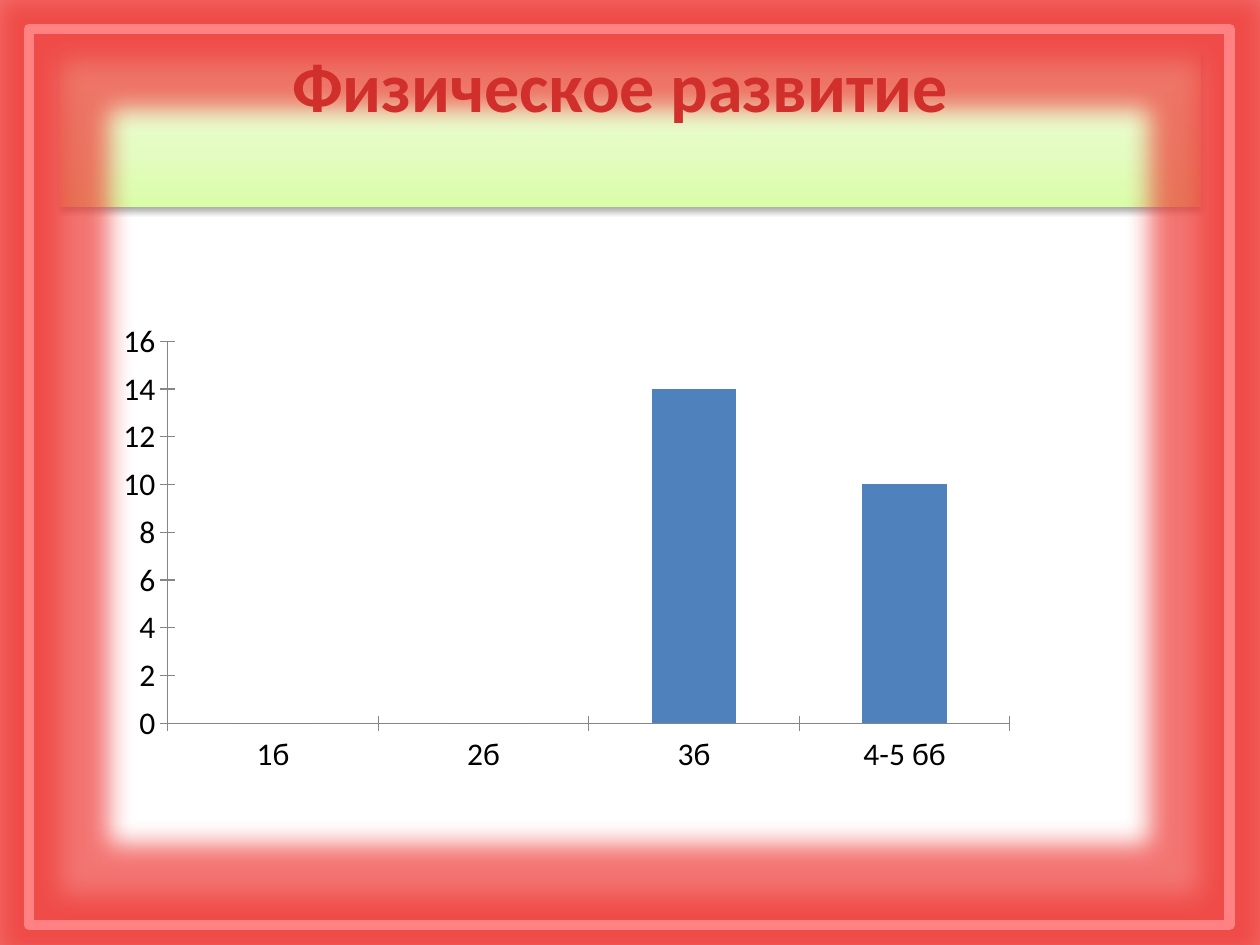
from pptx import Presentation
from pptx.chart.data import CategoryChartData
from pptx.dml.color import RGBColor
from pptx.enum.chart import XL_CHART_TYPE, XL_TICK_MARK
from pptx.enum.shapes import MSO_SHAPE
from pptx.enum.text import MSO_ANCHOR, PP_ALIGN
from pptx.oxml import parse_xml
from pptx.oxml.ns import nsdecls, qn
from pptx.util import Pt

COLUMN_STACKED = XL_CHART_TYPE.COLUMN_STACKED
TICK_CROSS = XL_TICK_MARK.CROSS
RECTANGLE = MSO_SHAPE.RECTANGLE
TOP = MSO_ANCHOR.TOP
CENTER = PP_ALIGN.CENTER

FRAME_PINK = RGBColor(0xFF, 0x81, 0x81)
GLOW_RED = RGBColor(0xEE, 0x3A, 0x36)
SHADOW_BLACK = RGBColor(0, 0, 0)
TITLE_RED = RGBColor(0xD0, 0x2F, 0x2C)
TEXT_BLACK = RGBColor(0, 0, 0)
COLUMN_BLUE = RGBColor(0x4F, 0x81, 0xBD)
AXIS_GRAY = RGBColor(0x86, 0x86, 0x86)
BANNER_STOPS = [
    (0, RGBColor(0xDA, 0xFD, 0xA7)),
    (35, RGBColor(0xE4, 0xFC, 0xC2)),
    (100, RGBColor(0xF5, 0xFF, 0xE7)),
]

TITLE_FORMAT = {"name": "Calibri", "size": Pt(40), "bold": True}
CHART_FORMAT = {"name": "Calibri", "size": Pt(18), "bold": False}
PLOT_LAYOUT = {"x": 0.09, "y": 0.18, "w": 0.91, "h": 0.71}
SCORES = {"1б": 0, "2б": 0, "3б": 14, "4-5 бб": 10}


def apply_format(target, values):
    for name, value in values.items():
        setattr(target, name, value)


def format_font(font, values, color):
    apply_format(font, values)
    font.color.rgb = color


def add_rectangle(slide, left, top, width, height):
    shape = slide.shapes.add_shape(RECTANGLE, Pt(left), Pt(top), Pt(width), Pt(height))
    shape.shadow.inherit = False
    return shape


def add_effect(shape, tag, attributes, color, opacity):
    effects = shape.element.spPr.find(qn("a:effectLst"))
    effects.append(parse_xml(
        f'<a:{tag} {nsdecls("a")} {attributes}><a:srgbClr val="{color}">'
        f'<a:alpha val="{opacity * 1000}"/></a:srgbClr></a:{tag}>'
    ))


def add_banner(slide):
    banner = add_rectangle(slide, 33.84, 28.08, 652.32, 90)
    banner.line.fill.background()
    banner.fill.gradient()
    banner.fill.gradient_angle = 90
    stops = banner.element.spPr.find(qn("a:gradFill")).find(qn("a:gsLst"))
    for stop in list(stops):
        stops.remove(stop)
    for position, color in BANNER_STOPS:
        stops.append(parse_xml(
            f'<a:gs {nsdecls("a")} pos="{position * 1000}">'
            f'<a:srgbClr val="{color}"/></a:gs>'
        ))
    shadow = f'blurRad="{Pt(3.5)}" dist="{Pt(2.2)}" dir="5400000" rotWithShape="0"'
    add_effect(banner, "outerShdw", shadow, SHADOW_BLACK, 32)


def add_frame(slide):
    frame = add_rectangle(slide, 16.56, 16.56, 686.16, 511.92)
    frame.fill.background()
    frame.line.color.rgb = FRAME_PINK
    frame.line.width = Pt(6)
    add_effect(frame, "glow", f'rad="{Pt(30)}"', GLOW_RED, 70)


def add_title(slide, text):
    title = slide.shapes.title
    apply_format(title, {
        "left": Pt(48.24), "top": Pt(20.88), "width": Pt(612), "height": Pt(55.44),
    })
    title.text_frame.text = text
    title.text_frame.vertical_anchor = TOP
    paragraph = title.text_frame.paragraphs[0]
    paragraph.alignment = CENTER
    format_font(paragraph.runs[0].font, TITLE_FORMAT, TITLE_RED)
    title.element.getparent().append(title.element)


def set_plot_layout(chart):
    plot_area = chart.element.find(qn("c:chart")).find(qn("c:plotArea"))
    layout = plot_area.find(qn("c:layout"))
    if layout is not None:
        plot_area.remove(layout)
    modes = "".join(f'<c:{side}Mode val="edge"/>' for side in "xy")
    sizes = "".join(f'<c:{side} val="{value}"/>' for side, value in PLOT_LAYOUT.items())
    plot_area.insert(0, parse_xml(
        f'<c:layout {nsdecls("c")}><c:manualLayout><c:layoutTarget val="inner"/>'
        f"{modes}{sizes}</c:manualLayout></c:layout>"
    ))


def add_score_chart(slide):
    data = CategoryChartData()
    data.categories = list(SCORES)
    data.add_series("Series 1", list(SCORES.values()))
    chart = slide.shapes.add_chart(
        COLUMN_STACKED, Pt(48.24), Pt(139.68), Pt(529.2), Pt(307.44), data
    ).chart
    apply_format(chart, {"has_legend": False, "has_title": False})
    format_font(chart.font, CHART_FORMAT, TEXT_BLACK)
    plot = chart.plots[0]
    apply_format(plot, {"vary_by_categories": False, "gap_width": 150, "overlap": 100})
    fill = plot.series[0].format.fill
    fill.solid()
    fill.fore_color.rgb = COLUMN_BLUE
    for axis in (chart.category_axis, chart.value_axis):
        apply_format(axis, {"major_tick_mark": TICK_CROSS, "has_major_gridlines": False})
        axis.format.line.color.rgb = AXIS_GRAY
    apply_format(chart.value_axis, {
        "minimum_scale": 0, "maximum_scale": 16, "major_unit": 2,
    })
    set_plot_layout(chart)


def main():
    presentation = Presentation()
    apply_format(presentation, {"slide_width": Pt(720), "slide_height": Pt(540)})
    slide = presentation.slides.add_slide(presentation.slide_layouts[5])
    add_banner(slide)
    add_frame(slide)
    add_title(slide, "Физическое развитие")
    add_score_chart(slide)
    presentation.save("out.pptx")


if __name__ == "__main__":
    main()
